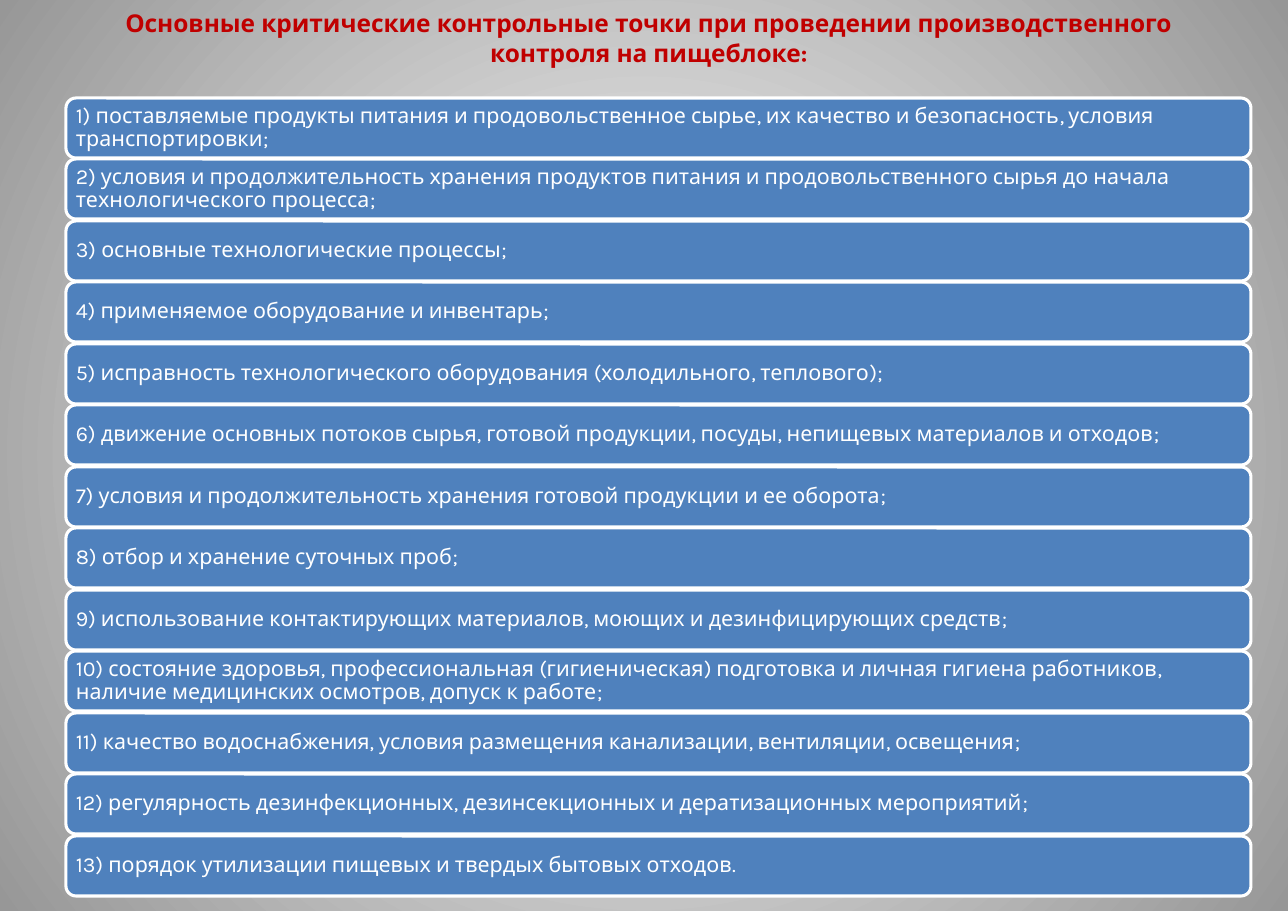
from lxml import etree
from pptx import Presentation
from pptx import util as u
from pptx.dml import color
from pptx.enum import shapes, text
from pptx.oxml import ns

EMU_PER_PX = 8298
FONT = "Karla"
COLORS = {
    "center": "FFFFFF",
    "edge": "979797",
    "title": "C00000",
    "bar": "4F81BD",
    "white": "FFFFFF",
}
TITLE = "Основные критические контрольные точки при проведении производственного контроля на пищеблоке:"
POINTS = [
    "поставляемые продукты питания и продовольственное сырье, их качество и безопасность, условия транспортировки;",
    "условия и продолжительность хранения продуктов питания и продовольственного сырья до начала технологического процесса;",
    "основные технологические процессы;",
    "применяемое оборудование и инвентарь;",
    "исправность технологического оборудования (холодильного, теплового);",
    "движение основных потоков сырья, готовой продукции, посуды, непищевых материалов и отходов;",
    "условия и продолжительность хранения готовой продукции и ее оборота;",
    "отбор и хранение суточных проб;",
    "использование контактирующих материалов, моющих и дезинфицирующих средств;",
    "состояние здоровья, профессиональная (гигиеническая) подготовка и личная гигиена работников, наличие медицинских осмотров, допуск к работе;",
    "качество водоснабжения, условия размещения канализации, вентиляции, освещения;",
    "регулярность дезинфекционных, дезинсекционных и дератизационных мероприятий;",
    "порядок утилизации пищевых и твердых бытовых отходов.",
]
LEFT = 66
FIRST_BAR_TOP = 98
LAST_BAR_TOP = 836
BAR_WIDTH = 1185
BAR_HEIGHT = 60
BAR_INSET = 7


def px(length):
    return u.Emu(length * EMU_PER_PX)


def rgb(name):
    return color.RGBColor.from_string(COLORS[name])


def set_background(slide):
    fill = slide.background.fill
    fill.gradient()
    for stop, position, name in zip(fill.gradient_stops, (0, 1), ("center", "edge")):
        stop.position = position
        stop.color.rgb = rgb(name)
    gradient = slide.element.find(".//" + ns.qn("a:gradFill"))
    gradient.remove(gradient.find(ns.qn("a:lin")))
    circle = etree.SubElement(gradient, ns.qn("a:path"), path="circle")
    etree.SubElement(circle, ns.qn("a:fillToRect"), l="50000", t="50000", r="50000", b="50000")


def add_text(paragraph, content, size, color_name, bold=False):
    run = paragraph.add_run()
    run.text = content
    run.font.name = FONT
    run.font.size = u.Pt(size)
    run.font.bold = bold
    run.font.color.rgb = rgb(color_name)


def add_title(slide):
    shape = slide.shapes.add_textbox(px(LEFT), px(3), px(1166), px(71))
    frame = shape.text_frame
    frame.word_wrap = True
    frame.auto_size = text.MSO_AUTO_SIZE.SHAPE_TO_FIT_TEXT
    paragraph = frame.paragraphs[0]
    paragraph.alignment = text.PP_ALIGN.CENTER
    add_text(paragraph, TITLE, 16, "title", bold=True)


def add_bar(slide, top, content):
    shape = slide.shapes.add_shape(
        shapes.MSO_SHAPE.ROUNDED_RECTANGLE, px(LEFT), px(top), px(BAR_WIDTH), px(BAR_HEIGHT)
    )
    shape.shadow.inherit = False
    shape.fill.solid()
    shape.fill.fore_color.rgb = rgb("bar")
    shape.line.color.rgb = rgb("white")
    shape.line.width = u.Pt(2)
    frame = shape.text_frame
    frame.word_wrap = True
    frame.vertical_anchor = text.MSO_ANCHOR.MIDDLE
    frame.margin_left = frame.margin_right = px(BAR_INSET)
    frame.margin_top = frame.margin_bottom = px(BAR_INSET)
    paragraph = frame.paragraphs[0]
    paragraph.alignment = text.PP_ALIGN.LEFT
    paragraph.line_spacing = 0.9
    add_text(paragraph, content, 14, "white")


def main():
    presentation = Presentation()
    presentation.slide_width = px(1288)
    presentation.slide_height = px(911)
    slide = presentation.slides.add_slide(presentation.slide_layouts[6])
    set_background(slide)
    span = LAST_BAR_TOP - FIRST_BAR_TOP
    for index, point in enumerate(POINTS):
        top = FIRST_BAR_TOP + span * index // (len(POINTS) - 1)
        add_bar(slide, top, f"{index + 1}) {point}")
    add_title(slide)
    presentation.save("out.pptx")


if __name__ == "__main__":
    main()
